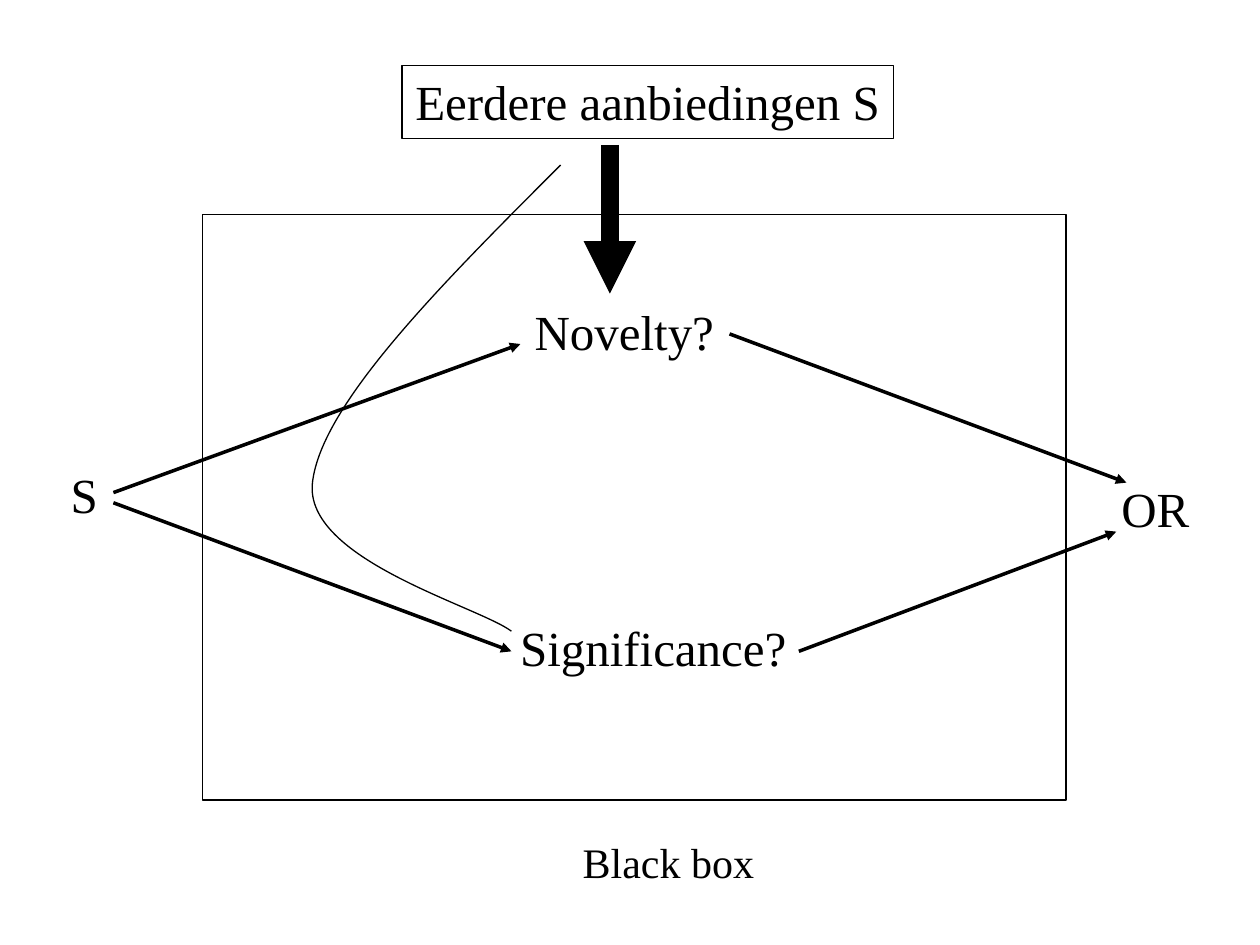
from lxml.etree import SubElement
from pptx import Presentation
from pptx.dml.color import RGBColor
from pptx.enum.shapes import MSO_CONNECTOR, MSO_SHAPE
from pptx.enum.text import MSO_ANCHOR, PP_ALIGN
from pptx.oxml.ns import qn
from pptx.util import Pt

COLORS = {"ink": "000000"}
FONT = "Times New Roman"

# Left, top, width, height in points
BLACK_BOX = (115.9, 122.4, 493.2, 334.8)
EARLIER_BOX = (229.7, 37.4, 280.8, 41.8)
LABELS = [
    ("Black box", (308.9, 474.5, 146.2, 36), 24),
    ("S", (33.1, 262.1, 30.2, 41), 28),
    ("OR", (633.6, 270, 53.3, 41), 28),
    ("Novelty?", (283.7, 168.5, 146.2, 41), 28),
    ("Significance?", (277.9, 349.2, 190.8, 41), 28),
]
# Start, end, line width
ARROWS = [
    ((348.5, 82.8), (348.5, 167.8), 10),
    ((64.8, 281.5), (297.4, 196.6), 2),
    ((64.8, 287.3), (292.3, 372.2), 2),
    ((416.9, 190.8), (643.7, 275.8), 2),
    ((456.5, 372.2), (637.9, 303.8), 2),
]
# Start point, then two control points and an end point for each curve
FEEDBACK_CURVE = [
    (320.4, 94.3),
    (252, 162.7), (183.6, 231.1), (178.6, 275.8),
    (173.5, 319.7), (272.9, 346.3), (292.3, 360.7),
]


def points(values):
    return [Pt(value) for value in values]


def set_line(shape, width):
    shape.line.color.rgb = RGBColor.from_string(COLORS["ink"])
    shape.line.width = Pt(width)


def add_frame(slide, place):
    frame = slide.shapes.add_shape(MSO_SHAPE.RECTANGLE, *points(place))
    frame.shadow.inherit = False
    frame.fill.background()
    set_line(frame, 0.75)
    return frame


def write(shape, text, *, size=28, color="ink", align=PP_ALIGN.CENTER):
    text_frame = shape.text_frame
    text_frame.word_wrap = False
    text_frame.vertical_anchor = MSO_ANCHOR.TOP
    paragraph = text_frame.paragraphs[0]
    paragraph.alignment = align
    run = paragraph.add_run()
    run.text = text
    run.font.name = FONT
    run.font.size = Pt(size)
    run.font.color.rgb = RGBColor.from_string(COLORS[color])


def add_arrow(slide, start, end, width):
    arrow = slide.shapes.add_connector(
        MSO_CONNECTOR.STRAIGHT, *points(start + end))
    set_line(arrow, width)
    SubElement(arrow.line._get_or_add_ln(), qn("a:tailEnd"), type="triangle")
    SubElement(arrow._element.spPr, qn("a:effectLst"))


def add_curve(slide, anchors):
    """Draw straight segments, then merge every three into a Bézier curve."""
    builder = slide.shapes.build_freeform(*points(anchors[0]), scale=1.0)
    builder.add_line_segments([points(p) for p in anchors[1:]], close=False)
    curve = builder.convert_to_shape()
    curve.shadow.inherit = False
    curve.fill.background()
    set_line(curve, 0.75)

    segments = list(curve._element.iter(qn("a:lnTo")))
    outline = segments[0].getparent()
    for first in range(0, len(segments), 3):
        bezier = SubElement(outline, qn("a:cubicBezTo"))
        for segment in segments[first:first + 3]:
            bezier.append(segment[0])
            outline.remove(segment)


def main():
    presentation = Presentation()
    presentation.slide_width, presentation.slide_height = Pt(720), Pt(540)
    slide = presentation.slides.add_slide(presentation.slide_layouts[6])

    add_frame(slide, BLACK_BOX)
    write(add_frame(slide, EARLIER_BOX), "Eerdere aanbiedingen S")
    for text, place, size in LABELS:
        write(slide.shapes.add_textbox(*points(place)), text, size=size)
    for start, end, width in ARROWS:
        add_arrow(slide, start, end, width)
    add_curve(slide, FEEDBACK_CURVE)

    presentation.save("out.pptx")


if __name__ == "__main__":
    main()
